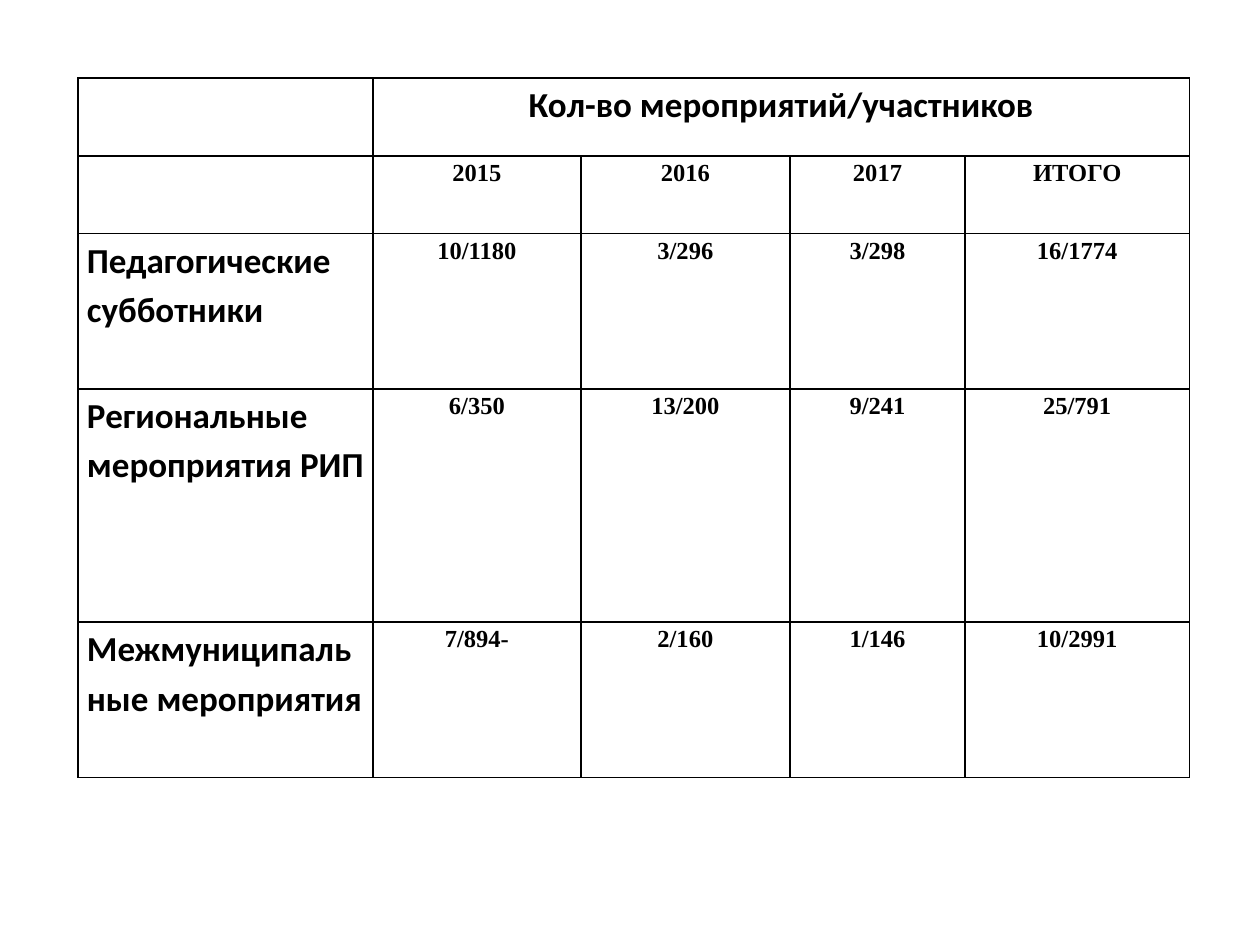
from typing import NamedTuple

from lxml.etree import SubElement
from pptx import Presentation
from pptx.dml.color import RGBColor
from pptx.enum.text import PP_ALIGN
from pptx.oxml.ns import qn
from pptx.util import Inches, Pt

BLACK = RGBColor(0, 0, 0)
SLIDE_WIDTH, SLIDE_HEIGHT = Inches(10), Inches(7.5)
TABLE_LEFT = TABLE_TOP = Inches(0.62)
COLUMN_WIDTHS = [Inches(width) for width in (2.34, 1.65, 1.66, 1.39, 1.78)]
ROW_UNITS = (1, 1, 2, 3, 2)
ROW_UNIT = Inches(5.55) // sum(ROW_UNITS)
MARGINS = {
    "margin_left": Inches(0.07),
    "margin_right": Inches(0.07),
    "margin_top": 0,
    "margin_bottom": 0,
}


class TextStyle(NamedTuple):
    font: dict
    alignment: PP_ALIGN


HEADING_FONT = {"name": "Calibri", "size": Pt(20), "bold": True}
VALUE_FONT = {"name": "Times New Roman", "size": Pt(14), "bold": True}
HEADER = TextStyle(HEADING_FONT, PP_ALIGN.CENTER)
ROW_LABEL = TextStyle(HEADING_FONT, PP_ALIGN.LEFT)
VALUE = TextStyle(VALUE_FONT, PP_ALIGN.CENTER)

ROWS = (
    ("", "Кол-во мероприятий/участников", "", "", ""),
    ("", "2015", "2016", "2017", "ИТОГО"),
    ("Педагогические субботники", "10/1180", "3/296", "3/298", "16/1774"),
    ("Региональные мероприятия РИП", "6/350", "13/200", "9/241", "25/791"),
    ("Межмуниципальные мероприятия", "7/894-", "2/160", "1/146", "10/2991"),
)


def set_attributes(target, values: dict) -> None:
    for name, value in values.items():
        setattr(target, name, value)


def add_borders(cell, color: RGBColor, width: int) -> None:
    properties = cell._tc.get_or_add_tcPr()
    for side in ("a:lnL", "a:lnR", "a:lnT", "a:lnB"):
        line = SubElement(properties, qn(side), w=str(width))
        fill = SubElement(line, qn("a:solidFill"))
        SubElement(fill, qn("a:srgbClr"), val=str(color))


def write_cell(cell, text: str, style: TextStyle) -> None:
    set_attributes(cell, MARGINS)
    add_borders(cell, BLACK, Pt(1))
    cell.fill.background()
    if not text:
        return
    paragraph = cell.text_frame.paragraphs[0]
    set_attributes(paragraph, {"alignment": style.alignment, "line_spacing": 1.15})
    run = paragraph.add_run()
    run.text = text
    set_attributes(run.font, style.font)
    run.font.color.rgb = BLACK


def style_for(row: int, column: int) -> TextStyle:
    if column == 0:
        return ROW_LABEL
    return HEADER if row == 0 else VALUE


def add_events_table(slide) -> None:
    table = slide.shapes.add_table(
        len(ROWS), len(COLUMN_WIDTHS), TABLE_LEFT, TABLE_TOP,
        sum(COLUMN_WIDTHS), ROW_UNIT * sum(ROW_UNITS),
    ).table
    set_attributes(table, {"first_row": False, "horz_banding": False})
    for column, width in zip(table.columns, COLUMN_WIDTHS):
        column.width = width
    for row, units in zip(table.rows, ROW_UNITS):
        row.height = ROW_UNIT * units
    table.cell(0, 1).merge(table.cell(0, len(COLUMN_WIDTHS) - 1))
    for row, texts in enumerate(ROWS):
        for column, text in enumerate(texts):
            write_cell(table.cell(row, column), text, style_for(row, column))


def main() -> None:
    presentation = Presentation()
    presentation.slide_width = SLIDE_WIDTH
    presentation.slide_height = SLIDE_HEIGHT
    slide = presentation.slides.add_slide(presentation.slide_layouts[6])
    add_events_table(slide)
    presentation.save("out.pptx")


if __name__ == "__main__":
    main()
